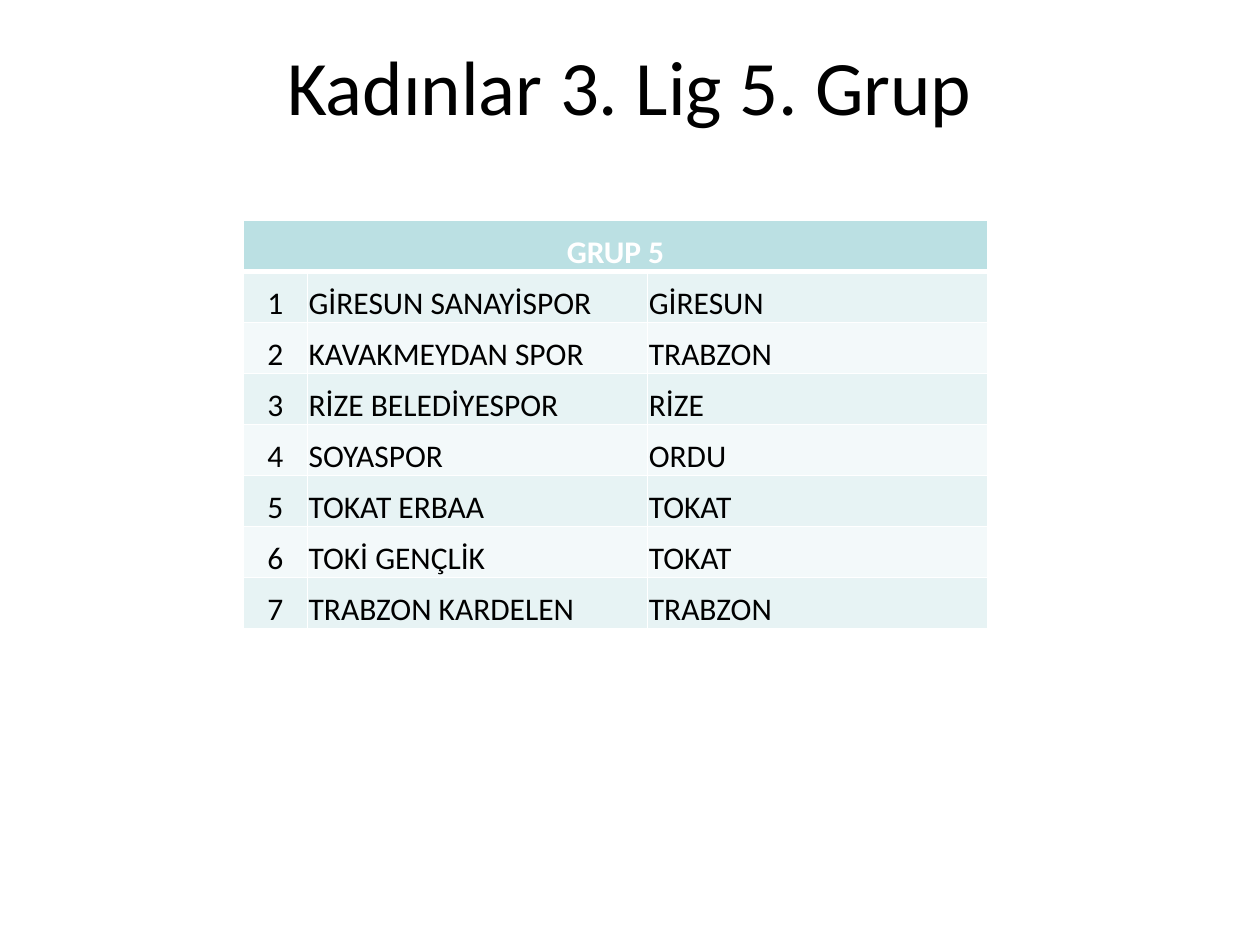
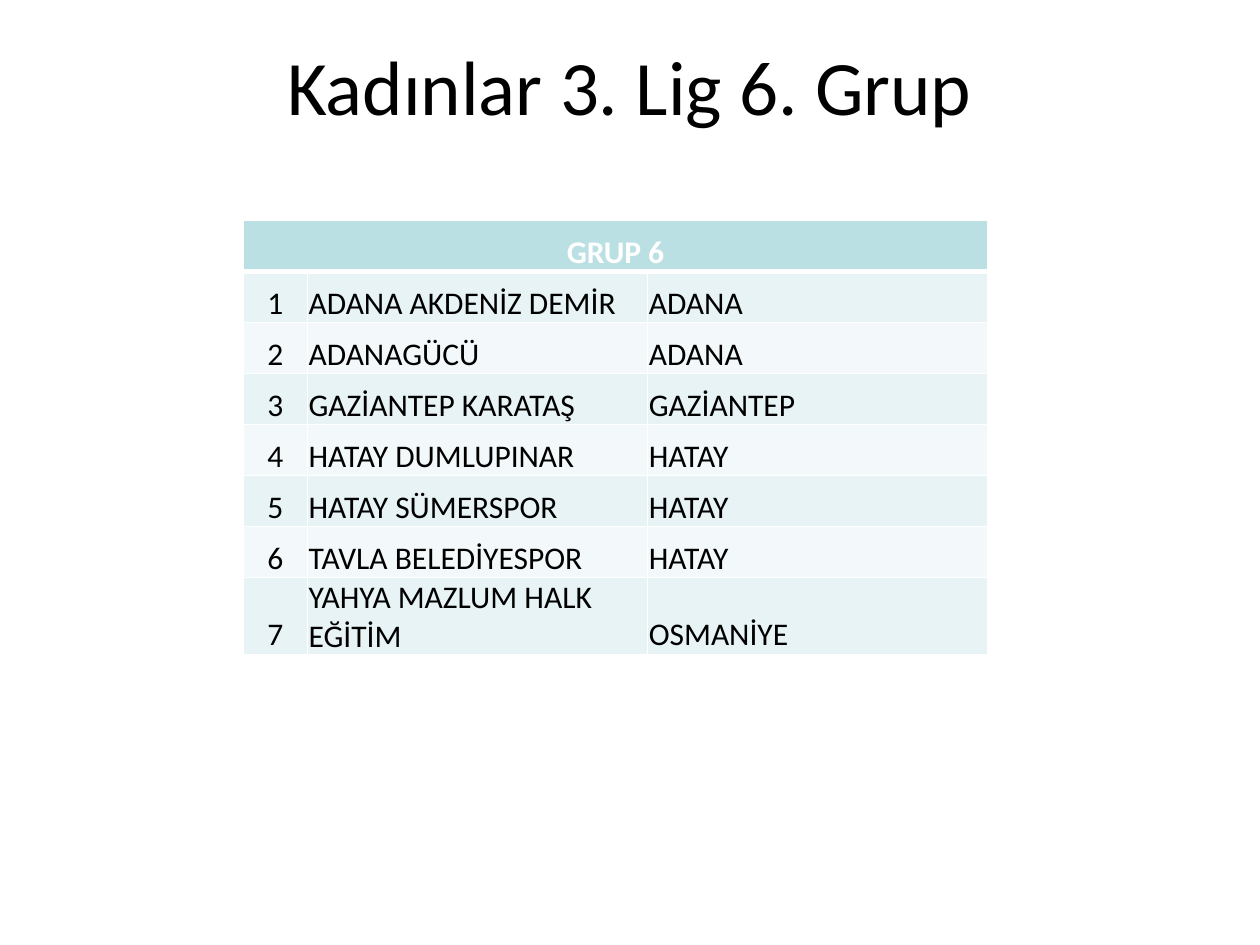
"""Build the two group slides of the women's third league."""
import dataclasses

import lxml.etree
import pptx
import pptx.dml.color
import pptx.enum.text
import pptx.oxml.ns
import pptx.util

Inches = pptx.util.Inches
Pt = pptx.util.Pt
Align = pptx.enum.text.PP_ALIGN
Anchor = pptx.enum.text.MSO_ANCHOR


@dataclasses.dataclass(frozen=True)
class Theme:
    font: str = "Calibri"
    title_size: int = 44
    table_size: int = 18
    text: str = "000000"
    white: str = "FFFFFF"
    header: str = "BBE0E3"
    bands: tuple = ("E7F3F4", "F3F9FA")
    thin: int = 1
    thick: int = 3


theme = Theme()

groups = {
    5: [
        ("GİRESUN SANAYİSPOR", "GİRESUN"),
        ("KAVAKMEYDAN SPOR", "TRABZON"),
        ("RİZE BELEDİYESPOR", "RİZE"),
        ("SOYASPOR", "ORDU"),
        ("TOKAT ERBAA", "TOKAT"),
        ("TOKİ GENÇLİK", "TOKAT"),
        ("TRABZON KARDELEN", "TRABZON"),
    ],
    6: [
        ("ADANA AKDENİZ DEMİR", "ADANA"),
        ("ADANAGÜCÜ", "ADANA"),
        ("GAZİANTEP KARATAŞ", "GAZİANTEP"),
        ("HATAY DUMLUPINAR", "HATAY"),
        ("HATAY SÜMERSPOR", "HATAY"),
        ("TAVLA BELEDİYESPOR", "HATAY"),
        ("YAHYA MAZLUM HALK EĞİTİM", "OSMANİYE"),
    ],
}
column_widths = (0.51, 2.7, 2.7)


def write(frame, text, size, color, align, bold=False):
    para = frame.paragraphs[0]
    para.alignment = align
    span = para.add_run()
    span.text = text
    span.font.name = theme.font
    span.font.size = Pt(size)
    span.font.bold = bold
    span.font.color.rgb = pptx.dml.color.RGBColor.from_string(color)


def style_cell(cell, fill, top, bottom):
    cell.margin_left = cell.margin_right = cell.margin_top = Inches(0.01)
    cell.margin_bottom = 0
    cell.vertical_anchor = Anchor.BOTTOM
    qn = pptx.oxml.ns.qn
    properties = cell._tc.get_or_add_tcPr()
    for side, width in (("L", theme.thin), ("R", theme.thin), ("T", top), ("B", bottom)):
        line = lxml.etree.SubElement(properties, qn(f"a:ln{side}"), w=str(Pt(width)))
        paint = lxml.etree.SubElement(line, qn("a:solidFill"))
        lxml.etree.SubElement(paint, qn("a:srgbClr"), val=theme.white)
    cell.fill.solid()
    cell.fill.fore_color.rgb = pptx.dml.color.RGBColor.from_string(fill)


deck = pptx.Presentation()
deck.slide_width = Inches(10)
deck.slide_height = Inches(7.5)

for number, teams in groups.items():
    page = deck.slides.add_slide(deck.slide_layouts[6])

    box = page.shapes.add_textbox(Inches(0.5), Inches(0.05), Inches(9), Inches(1.25))
    box.text_frame.word_wrap = True
    box.text_frame.vertical_anchor = Anchor.MIDDLE
    write(box.text_frame, f"Kadınlar 3. Lig {number}. Grup", theme.title_size, theme.text, Align.CENTER)

    table = page.shapes.add_table(
        len(teams) + 1, len(column_widths), Inches(1.93), Inches(1.75), Inches(5.91), Inches(3.24)
    ).table
    table.first_row = False
    table.horz_banding = False
    for column, width in zip(table.columns, column_widths):
        column.width = Inches(width)

    for cell in table.rows[0].cells:
        style_cell(cell, theme.header, theme.thin, theme.thick)
    heading = table.cell(0, 0)
    heading.merge(table.cell(0, len(column_widths) - 1))
    write(heading.text_frame, f"GRUP {number}", theme.table_size, theme.white, Align.CENTER, bold=True)

    for rank, (team, city) in enumerate(teams, start=1):
        fill = theme.bands[(rank - 1) % 2]
        top = theme.thick if rank == 1 else theme.thin
        aligns = (Align.CENTER, Align.LEFT, Align.LEFT)
        for cell, text, align in zip(table.rows[rank].cells, (str(rank), team, city), aligns):
            style_cell(cell, fill, top, theme.thin)
            write(cell.text_frame, text, theme.table_size, theme.text, align)

deck.save("out.pptx")
